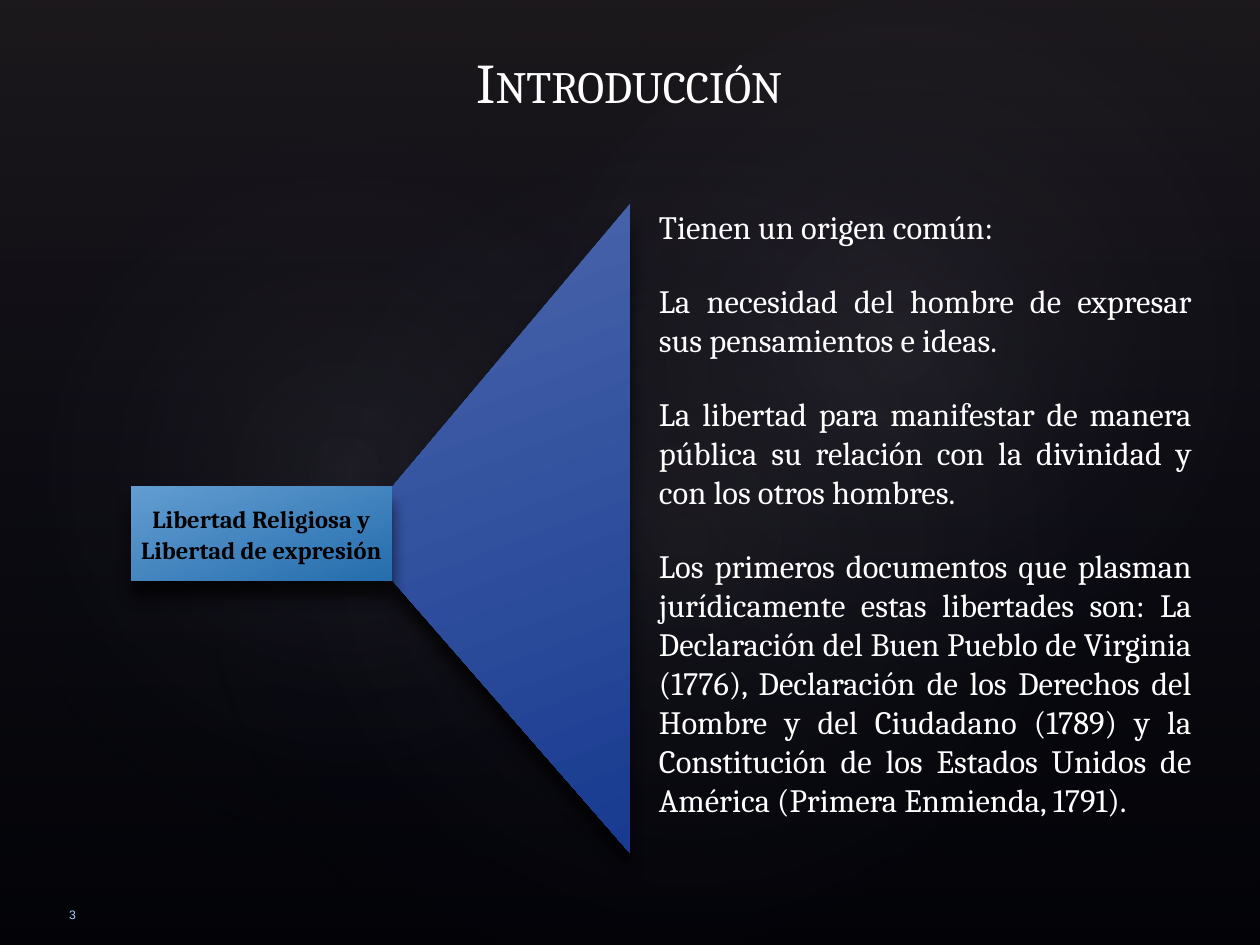
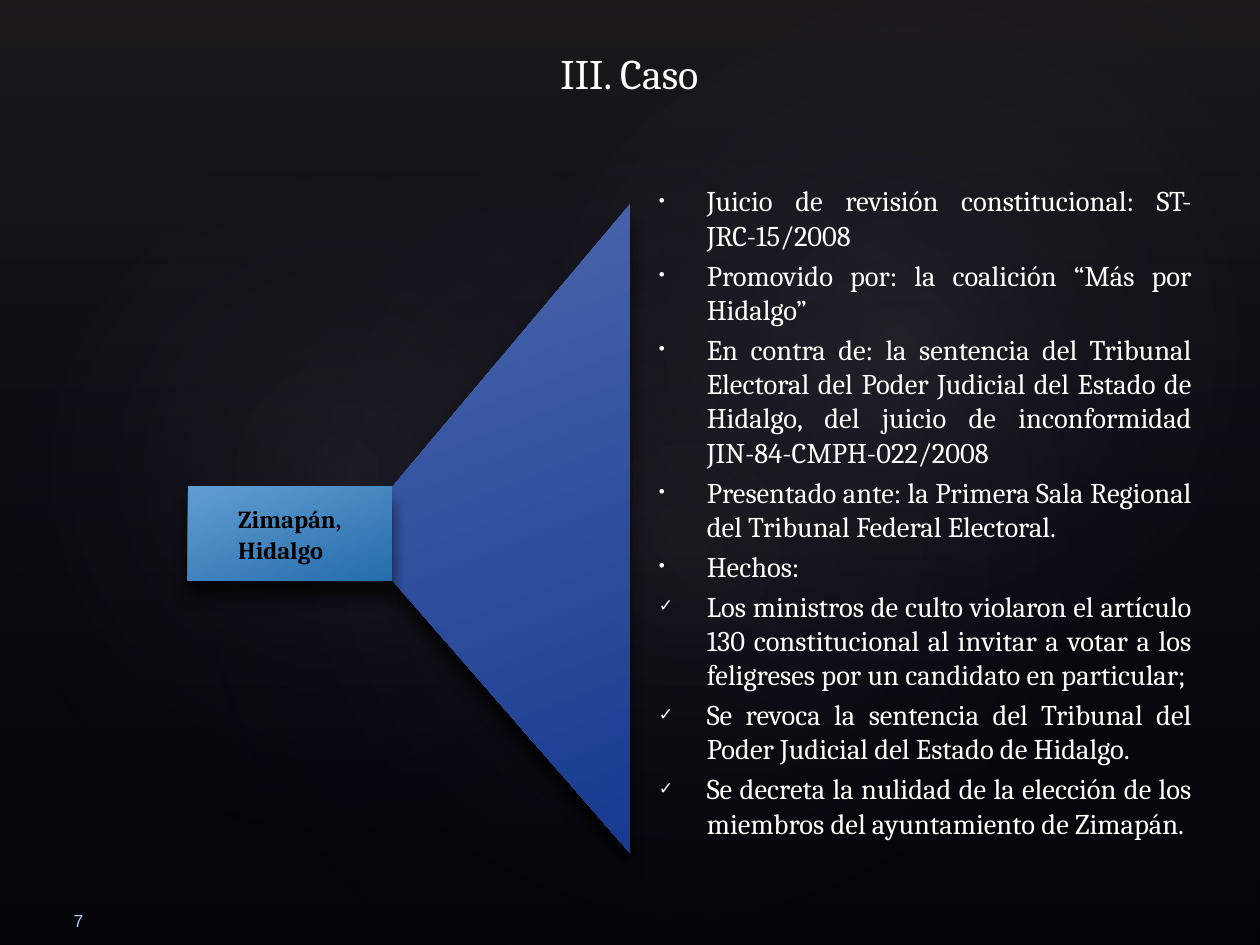
from lxml.etree import SubElement
from pptx import Presentation
from pptx.dml.color import RGBColor
from pptx.enum.shapes import MSO_SHAPE
from pptx.enum.text import MSO_ANCHOR, MSO_AUTO_SIZE, PP_ALIGN
from pptx.oxml.ns import qn
from pptx.util import Inches, Pt

BLACK = RGBColor(0x00, 0x00, 0x00)
WHITE = RGBColor(0xFF, 0xFF, 0xFF)
PALE_BLUE = RGBColor(0xAC, 0xCB, 0xF9)
NAVY = RGBColor(0x24, 0x28, 0x52)
PLUM = RGBColor(0x50, 0x46, 0x52)
MIST = RGBColor(0xC4, 0xBC, 0xC6)
INDIGO_LIGHT = RGBColor(0x4A, 0x66, 0xAC)
INDIGO_DARK = RGBColor(0x18, 0x3A, 0x90)
SKY_LIGHT = RGBColor(0x62, 0x9D, 0xD1)
SKY_DARK = RGBColor(0x25, 0x6D, 0xAD)

SERIF, SANS = "Cambria", "Arial"
JUSTIFY, LEFT = PP_ALIGN.JUSTIFY, PP_ALIGN.LEFT
DOT, CHECK = "•", "✓"

TITLE_BOX = (0.43, 0.33, 9.13, 0.65)
BODY_BOX = (5.13, 1.59, 4.43, 5.2)
NUMBER_BOX = (0.45, 7.17, 0.31, 0.16)
FUNNEL = [(3.1, 3.88), (5, 1.62), (5, 6.77), (3.1, 4.59)]
LABEL_TOP, LABEL_HEIGHT, LABEL_RIGHT = 3.86, 0.75, 3.11
GLOWS = [
    ((1.5, 1.14, 7.92, 6.24), 328.7, 7),
    ((-0.3, 1.28, 6.06, 4.9), 294.3, 8),
    ((3.58, 0.13, 7.09, 5.2), 328.7, 8),
]

INTRODUCTION = [
    "Tienen un origen común:",
    "La necesidad del hombre de expresar sus pensamientos e ideas.",
    "La libertad para manifestar de manera pública su relación con la divinidad "
    "y con los otros hombres.",
    "Los primeros documentos que plasman jurídicamente estas libertades son: "
    "La Declaración del Buen Pueblo de Virginia (1776), Declaración de los "
    "Derechos del Hombre y del Ciudadano (1789) y la Constitución de los Estados "
    "Unidos de América (Primera Enmienda, 1791).",
]
CASE_DATA = [
    "Juicio de revisión constitucional: ST-JRC-15/2008",
    "Promovido por: la coalición “Más por Hidalgo”",
    "En contra de: la sentencia del Tribunal Electoral del Poder Judicial del "
    "Estado de Hidalgo, del juicio de inconformidad JIN-84-CMPH-022/2008",
    "Presentado ante: la Primera Sala Regional del Tribunal Federal Electoral.",
    "Hechos:",
]
CASE_FACTS = [
    "Los ministros de culto violaron el artículo 130 constitucional al invitar a "
    "votar a los feligreses por un candidato en particular;",
    "Se revoca la sentencia del Tribunal del Poder Judicial del Estado de Hidalgo.",
    "Se decreta la nulidad de la elección de los miembros del ayuntamiento de "
    "Zimapán.",
]

SLIDES = [
    dict(
        title="Introducción", title_format=dict(size=32, small_caps=True),
        body=INTRODUCTION, bullets=[None] * len(INTRODUCTION),
        body_format=dict(size=18.6, before=20, anchor=MSO_ANCHOR.TOP),
        label="Libertad Religiosa y Libertad de expresión", label_width=2.07,
        label_format=dict(align=PP_ALIGN.CENTER, margins=(0.08,) * 4),
        number="3",
        number_format=dict(size=7, align=LEFT, anchor=MSO_ANCHOR.BOTTOM,
                           margins=(0.1, 0.05, 0.1, 0.01)),
    ),
    dict(
        title="III. Caso", title_format=dict(size=24),
        body=CASE_DATA + CASE_FACTS,
        bullets=[DOT] * len(CASE_DATA) + [CHECK] * len(CASE_FACTS),
        body_format=dict(size=16.3, before=3.3, anchor=MSO_ANCHOR.MIDDLE,
                         margins=(0.1, 0.05, 0.1, 0.31)),
        label="Zimapán, Hidalgo", label_width=1.62,
        label_format=dict(align=LEFT, margins=(0.4, 0.08, 0.08, 0.08)),
        number="7", number_format=dict(size=10, align=PP_ALIGN.RIGHT),
    ),
]


def inches(box):
    return [Inches(length) for length in box]


def write(target, text, size=14, color=WHITE, font=SERIF, bold=False,
          align=PP_ALIGN.CENTER, anchor=MSO_ANCHOR.TOP, before=0, spacing=None,
          small_caps=False, bullets=None, margins=(0.1, 0.05, 0.1, 0.05)):
    frame = target.text_frame
    frame.text = text if isinstance(text, str) else "\n".join(text)
    frame.word_wrap = True
    frame.auto_size = MSO_AUTO_SIZE.NONE
    frame.vertical_anchor = anchor
    (frame.margin_left, frame.margin_top,
     frame.margin_right, frame.margin_bottom) = inches(margins)
    for index, paragraph in enumerate(frame.paragraphs):
        paragraph.alignment = align
        paragraph.space_before = Pt(before)
        if spacing:
            paragraph.line_spacing = spacing
        if bullets:
            set_bullet(paragraph, bullets[index])
        for run in paragraph.runs:
            run.font.name = font
            run.font.size = Pt(size)
            run.font.bold = bold
            run.font.color.rgb = color
            if small_caps:
                run.font._element.set("cap", "small")


def set_bullet(paragraph, bullet):
    properties = paragraph._p.get_or_add_pPr()
    indent = Inches(0.38) if bullet else 0
    properties.set("marL", str(indent))
    properties.set("indent", str(-indent))
    if bullet:
        SubElement(properties, qn("a:buSzPct"), val="60000")
        SubElement(properties, qn("a:buFont"), typeface=SANS)
        SubElement(properties, qn("a:buChar"), char=bullet)
    else:
        SubElement(properties, qn("a:buNone"))


def add_color(parent, color, opacity):
    element = SubElement(parent, qn("a:srgbClr"), val=str(color))
    SubElement(element, qn("a:alpha"), val=str(opacity * 1000))


def paint(shape, stops, angle=None):
    shape.shadow.inherit = False
    shape.line.fill.background()
    shape.fill.background()
    properties = shape.element.spPr
    empty_fill = properties.find(qn("a:noFill"))
    gradient = SubElement(properties, qn("a:gradFill"), rotWithShape="1")
    properties.replace(empty_fill, gradient)
    stop_list = SubElement(gradient, qn("a:gsLst"))
    for position, color, opacity in stops:
        stop = SubElement(stop_list, qn("a:gs"), pos=str(position * 1000))
        add_color(stop, color, opacity)
    if angle is None:
        center = SubElement(gradient, qn("a:path"), path="circle")
        SubElement(center, qn("a:fillToRect"),
                   **{side: "50000" for side in "ltrb"})
    else:
        SubElement(gradient, qn("a:lin"), ang=str(angle * 60000), scaled="0")


def paint_raised(shape, light, dark):
    paint(shape, [(0, light, 100), (100, dark, 100)], angle=69)
    effects = shape.element.spPr.find(qn("a:effectLst"))
    shadow = SubElement(effects, qn("a:outerShdw"), blurRad=str(Pt(9)),
                        dist=str(Pt(9)), dir="5400000", rotWithShape="0")
    add_color(shadow, BLACK, 70)


def build_backdrop(master, slide):
    master.background.fill.solid()
    master.background.fill.fore_color.rgb = BLACK
    veil = slide.shapes.add_shape(MSO_SHAPE.RECTANGLE, *inches((0, 0, 10, 7.5)))
    paint(veil, [(0, PLUM, 36), (100, NAVY, 10)], angle=90)
    backdrop = [veil]
    for box, rotation, opacity in GLOWS:
        glow = slide.shapes.add_shape(MSO_SHAPE.OVAL, *inches(box))
        glow.rotation = rotation
        paint(glow, [(0, MIST, opacity), (58, NAVY, 0)])
        backdrop.append(glow)
    for position, part in enumerate(backdrop, start=2):
        master.shapes.element.insert(position, part.element)


def place(placeholder, box):
    (placeholder.left, placeholder.top,
     placeholder.width, placeholder.height) = inches(box)
    return placeholder


def build_slide(slide, content):
    title = place(slide.shapes.title, TITLE_BOX)
    write(title, content["title"], **content["title_format"])

    start, *corners = [inches(point) for point in FUNNEL]
    outline = slide.shapes.build_freeform(*start)
    outline.add_line_segments(corners, close=True)
    paint_raised(outline.convert_to_shape(), INDIGO_LIGHT, INDIGO_DARK)

    number = slide.shapes.add_textbox(*inches(NUMBER_BOX))
    write(number, content["number"], font=SANS, color=PALE_BLUE,
          **content["number_format"])

    body = place(slide.placeholders[1], BODY_BOX)
    write(body, content["body"], align=JUSTIFY, bullets=content["bullets"],
          **content["body_format"])

    width = content["label_width"]
    label = slide.shapes.add_shape(
        MSO_SHAPE.RECTANGLE,
        *inches((LABEL_RIGHT - width, LABEL_TOP, width, LABEL_HEIGHT)))
    paint_raised(label, SKY_LIGHT, SKY_DARK)
    write(label, content["label"], color=BLACK, bold=True, spacing=1.06,
          anchor=MSO_ANCHOR.MIDDLE, **content["label_format"])


def main():
    deck = Presentation()
    deck.slide_width, deck.slide_height = Inches(10), Inches(7.5)
    slides = [deck.slides.add_slide(deck.slide_layouts[1]) for _ in SLIDES]
    build_backdrop(deck.slide_master, slides[0])
    for slide, content in zip(slides, SLIDES):
        build_slide(slide, content)
    deck.save("out.pptx")


if __name__ == "__main__":
    main()
